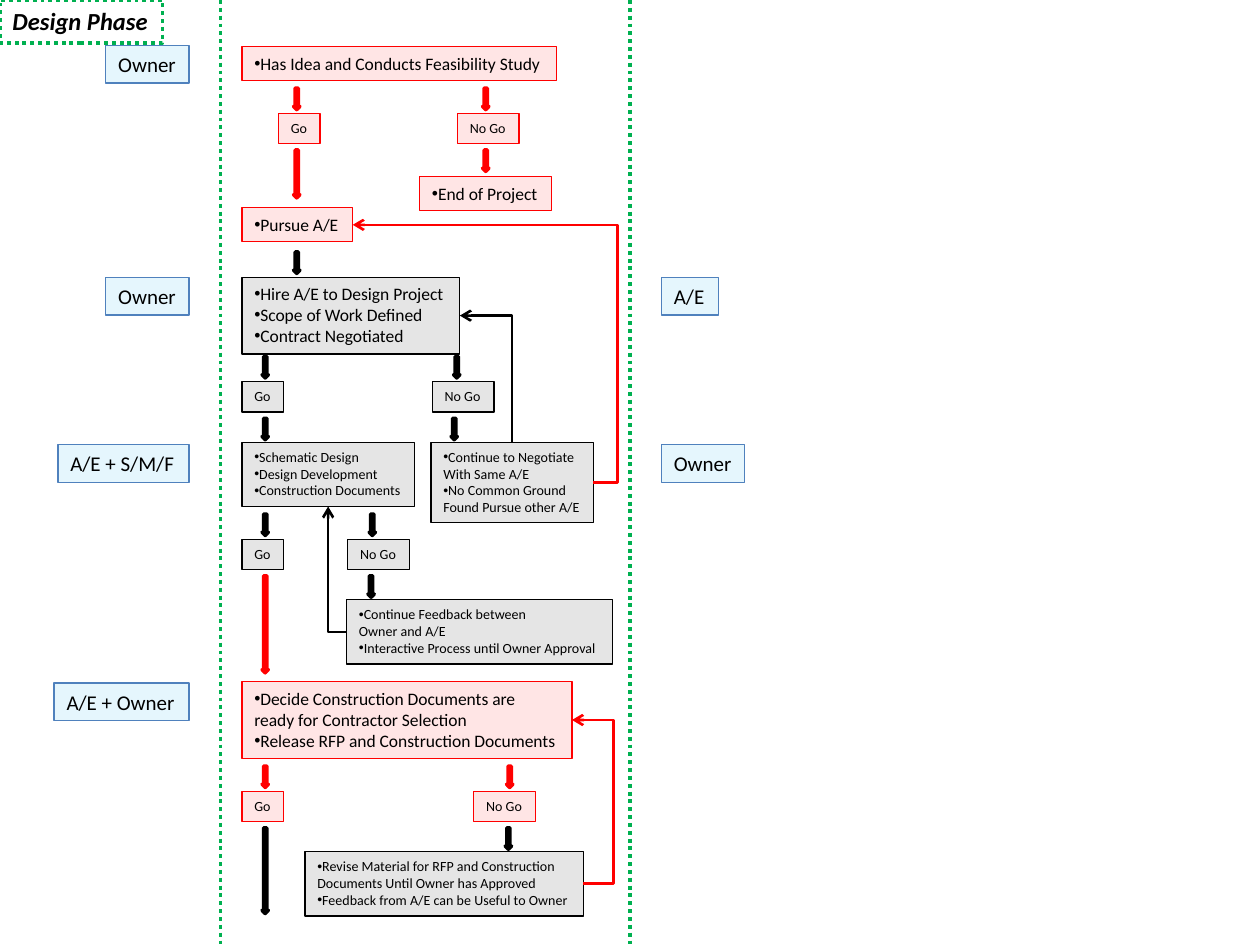
from dataclasses import dataclass
from typing import Optional

from lxml import etree
from pptx import Presentation
from pptx.dml.color import RGBColor
from pptx.enum.dml import MSO_LINE
from pptx.enum.shapes import MSO_CONNECTOR, MSO_SHAPE
from pptx.enum.text import MSO_ANCHOR, MSO_AUTO_SIZE, PP_ALIGN
from pptx.oxml.ns import qn
from pptx.util import Emu, Pt

PX = 9144  # 100 px to the inch
RECT, DOWN_ARROW = MSO_SHAPE.RECTANGLE, MSO_SHAPE.DOWN_ARROW
STRAIGHT, ELBOW = MSO_CONNECTOR.STRAIGHT, MSO_CONNECTOR.ELBOW
DOTTED = MSO_LINE.ROUND_DOT
TOP, LEFT, BOTTOM, RIGHT = range(4)


@dataclass(frozen=True)
class Theme:
    font: str = "Calibri"
    red: str = "FF0000"
    black: str = "000000"
    green: str = "00B050"
    sky: str = "00B0F0"
    brick: str = "C0504D"
    blue: str = "4F81BD"
    tint: int = 10  # opacity of pale fills, percent
    title: int = 14
    role: int = 12
    step: int = 10
    small: int = 8
    hairline: float = 0.75
    route: float = 1.5
    arrow: float = 2
    border: float = 2.25


T = Theme()


@dataclass(frozen=True)
class Box:
    x: int
    y: int
    w: int
    text: str  # one paragraph a line, "•" marks a bullet
    color: str
    size: int


@dataclass(frozen=True)
class Gate:
    text: str
    x: int
    y: int
    w: int
    color: str
    in_x: int  # arrow above
    out_x: int  # arrow below
    out_h: int
    out_color: str
    out_tint: Optional[str] = None  # pale fill, else solid


@dataclass(frozen=True)
class Route:
    start: str
    start_side: int
    end: str
    end_side: int
    color: str
    bend_x: Optional[int] = None  # two bends when given, else one


def px(n: float) -> Emu:
    return Emu(round(n * PX))


def paint(fill, color: str, opacity: int = 100) -> None:
    fill.solid()
    fill.fore_color.rgb = RGBColor.from_string(color)
    if opacity < 100:
        clr = fill._xPr.find(".//" + qn("a:srgbClr"))
        etree.SubElement(clr, qn("a:alpha")).set("val", str(opacity * 1000))


def stroke(line, color: str, width: float) -> None:
    line.color.rgb = RGBColor.from_string(color)
    line.width = Pt(width)


def write(tf, text: str, *, size: int, bold: bool = False, italic: bool = False) -> None:
    tf.word_wrap = False
    tf.auto_size = MSO_AUTO_SIZE.SHAPE_TO_FIT_TEXT
    tf.vertical_anchor = MSO_ANCHOR.TOP
    for i, row in enumerate(text.split("\n")):
        p = tf.add_paragraph() if i else tf.paragraphs[0]
        p.alignment = PP_ALIGN.LEFT
        if row.startswith("•"):
            pPr = p._p.get_or_add_pPr()
            etree.SubElement(pPr, qn("a:buFont")).set("typeface", "Arial")
            etree.SubElement(pPr, qn("a:buChar")).set("char", "•")
        r = p.add_run()
        r.text = row.lstrip("•")
        r.font.name, r.font.size = T.font, Pt(size)
        r.font.bold, r.font.italic = bold, italic
        r.font.color.rgb = RGBColor.from_string(T.black)


def add_box(s, b: Box, fill: Optional[str] = None):
    h = round(10 + (b.text.count("\n") + 1) * b.size * 1.22 * 100 / 72)
    sp = s.shapes.add_shape(RECT, px(b.x), px(b.y), px(b.w), px(h))
    sp.shadow.inherit = False
    paint(sp.fill, fill or b.color, T.tint)
    stroke(sp.line, b.color, T.hairline)
    write(sp.text_frame, b.text, size=b.size)
    return sp


def add_arrow(s, x: int, y: int, h: int, color: str, tint: Optional[str] = None) -> None:
    sp = s.shapes.add_shape(DOWN_ARROW, px(x), px(y), px(5), px(h))
    sp.shadow.inherit = False
    paint(sp.fill, tint or color, T.tint if tint else 100)
    stroke(sp.line, color, T.arrow)


def add_gate(s, g: Gate) -> None:
    add_arrow(s, g.in_x, g.y - 20, 17, g.color)
    add_box(s, Box(g.x, g.y, g.w, g.text, g.color, T.small))
    add_arrow(s, g.out_x, g.y + 29, g.out_h, g.out_color, g.out_tint)


def add_line(s, kind, x1: int, y1: int, x2: int, y2: int, color: str, width: float):
    c = s.shapes.add_connector(kind, px(x1), px(y1), px(x2), px(y2))
    etree.SubElement(c._element.spPr, qn("a:effectLst"))
    stroke(c.line, color, width)
    return c


def add_route(s, route: Route, steps: dict) -> None:
    c = add_line(s, ELBOW, 0, 0, 1, 1, route.color, T.route)
    c.begin_connect(steps[route.start], route.start_side)
    c.end_connect(steps[route.end], route.end_side)
    etree.SubElement(c.line._get_or_add_ln(), qn("a:tailEnd")).set("type", "arrow")
    spPr = c._element.spPr
    geom = spPr.find(qn("a:prstGeom"))
    if route.bend_x is not None:
        adj = round((px(route.bend_x) - c.begin_x) / (c.end_x - c.begin_x) * 100000)
        gd = etree.SubElement(geom.find(qn("a:avLst")), qn("a:gd"))
        gd.set("name", "adj1")
        gd.set("fmla", f"val {adj}")
        return
    geom.set("prst", "bentConnector2")
    if route.start_side == TOP:  # leaves upwards: turn the shape a quarter
        x, y, w, h = c.left, c.top, c.width, c.height
        c.left, c.top = Emu(x + (w - h) // 2), Emu(y + (h - w) // 2)
        c.width, c.height = h, w
        xfrm = spPr.find(qn("a:xfrm"))
        for key, value in (("rot", "16200000"), ("flipH", "0"), ("flipV", "1")):
            xfrm.set(key, value)


ROLES = [
    Box(x, y, w, text, T.blue, T.role)
    for x, y, w, text in (
        (84, 36, 66, "Owner"), (84, 220, 66, "Owner"), (46, 353, 104, "A/E + S/M/F"),
        (43, 542, 107, "A/E + Owner"), (525, 220, 45, "A/E"), (525, 353, 66, "Owner"),
    )
]
STEPS = {
    "idea": Box(192, 37, 250, "•Has Idea and Conducts Feasibility Study", T.red, T.step),
    "end": Box(333, 140, 105, "•End of Project", T.red, T.step),
    "pursue": Box(192, 165, 88, "•Pursue A/E", T.red, T.step),
    "hire": Box(192, 220, 173, "•Hire A/E to Design Project\n•Scope of Work Defined\n"
                "•Contract Negotiated", T.black, T.step),
    "design": Box(192, 351, 137, "•Schematic Design\n•Design Development\n"
                  "•Construction Documents", T.black, T.small),
    "negotiate": Box(342, 351, 129, "•Continue to Negotiate\nWith Same A/E\n"
                     "•No Common Ground\nFound Pursue other A/E", T.black, T.small),
    "feedback": Box(275, 476, 211, "•Continue Feedback between\nOwner and A/E\n"
                    "•Interactive Process until Owner Approval", T.black, T.small),
    "decide": Box(192, 541, 262, "•Decide Construction Documents are\nready for Contractor Selection\n"
                  "•Release RFP and Construction Documents", T.red, T.step),
    "revise": Box(242, 676, 221, "•Revise Material for RFP and Construction\n"
                  "Documents Until Owner has Approved\n"
                  "•Feedback from A/E can be Useful to Owner", T.black, T.small),
}
GATES = [
    Gate("Go", 221, 90, 33, T.red, 233, 233, 38, T.red),
    Gate("No Go", 363, 90, 49, T.red, 383, 383, 17, T.red),
    Gate("Go", 192, 303, 33, T.black, 208, 208, 17, T.black, T.sky),
    Gate("No Go", 343, 303, 49, T.black, 360, 358, 17, T.black, T.sky),
    Gate("Go", 192, 428, 33, T.black, 208, 208, 77, T.red, T.brick),
    Gate("No Go", 276, 428, 49, T.black, 293, 292, 17, T.black, T.sky),
    Gate("Go", 192, 628, 33, T.red, 208, 208, 68, T.black, T.sky),
    Gate("No Go", 376, 628, 49, T.red, 402, 401, 17, T.black, T.sky),
]
ROUTES = [
    Route("negotiate", TOP, "hire", RIGHT, T.black),
    Route("feedback", LEFT, "design", BOTTOM, T.black),
    Route("revise", RIGHT, "decide", RIGHT, T.red, 487),
    Route("negotiate", RIGHT, "pursue", RIGHT, T.red, 490),
]


def main() -> None:
    prs = Presentation()
    prs.slide_width, prs.slide_height = px(1000), px(750)
    s = prs.slides.add_slide(prs.slide_layouts[6])

    # Column dividers
    for x in (175, 500):
        add_line(s, STRAIGHT, x, 0, x, 750, T.green, T.border).line.dash_style = DOTTED

    # Phase title
    sp = s.shapes.add_shape(RECT, 0, 0, px(129), px(34))
    sp.shadow.inherit = False
    sp.fill.background()
    stroke(sp.line, T.green, T.border)
    sp.line.dash_style = DOTTED
    write(sp.text_frame, "Design Phase", size=T.title, bold=True, italic=True)

    # Responsible parties, steps, decisions and feedback loops
    for role in ROLES:
        add_box(s, role, T.sky)
    steps = {name: add_box(s, b) for name, b in STEPS.items()}
    for gate in GATES:
        add_gate(s, gate)
    add_arrow(s, 233, 200, 17, T.black)
    for route in ROUTES:
        add_route(s, route, steps)

    prs.save("out.pptx")


if __name__ == "__main__":
    main()
